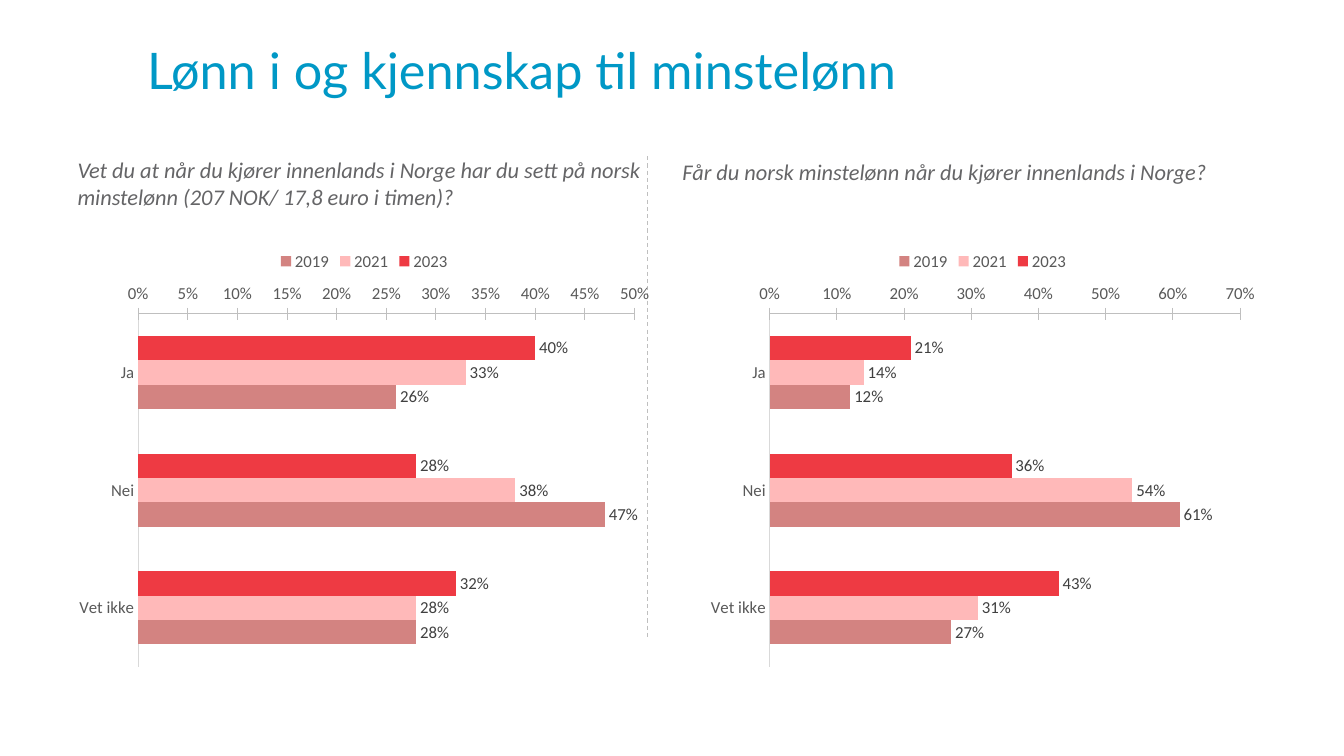
from lxml import etree
from pptx import Presentation
from pptx import util as u
from pptx.chart import data as chart_data
from pptx.dml import color
from pptx.enum import chart as charts, dml, shapes, text
from pptx.oxml import ns

ANSWERS = ["Ja", "Nei", "Vet ikke"]
YEAR_COLOURS = {"2023": "EE3A43", "2021": "FFB9B9", "2019": "D38381"}
AWARE_OF_MINIMUM = {
    "2023": [0.4, 0.28, 0.32],
    "2021": [0.33, 0.38, 0.28],
    "2019": [0.26, 0.47, 0.28],
}
RECEIVES_MINIMUM = {
    "2023": [0.21, 0.36, 0.43],
    "2021": [0.14, 0.54, 0.31],
    "2019": [0.12, 0.61, 0.27],
}


def rgb(value):
    return color.RGBColor.from_string(value)


def style_font(font, name, size, colour, italic=False):
    font.name = name
    font.size = u.Pt(size)
    font.bold = False
    font.italic = italic
    font.color.rgb = rgb(colour)


def write_text(box, bounds, wording, anchor, **style):
    box.left, box.top, box.width, box.height = map(u.Pt, bounds)
    frame = box.text_frame
    frame.word_wrap = True
    frame.auto_size = text.MSO_AUTO_SIZE.NONE
    frame.vertical_anchor = anchor
    para = frame.paragraphs[0]
    para.alignment = text.PP_ALIGN.LEFT
    para.space_before = u.Pt(0)
    span = para.add_run()
    span.text = wording
    style_font(span.font, **style)


def write_question(box, bounds, wording):
    write_text(box, bounds, wording, text.MSO_ANCHOR.BOTTOM,
               name="Calibri", size=16, colour="656567", italic=True)


def add_divider(page, x, top, bottom):
    line = page.shapes.add_connector(
        shapes.MSO_CONNECTOR.STRAIGHT, u.Pt(x), u.Pt(top), u.Pt(x), u.Pt(bottom))
    line.line.color.rgb = rgb("BFBFBF")
    line.line.width = u.Pt(0.75)
    line.line.dash_style = dml.MSO_LINE.DASH
    etree.SubElement(line._element.spPr, ns.qn("a:effectLst"))


def style_axis(axis, colour, tick):
    axis.has_major_gridlines = False
    axis.major_tick_mark = tick
    axis.minor_tick_mark = charts.XL_TICK_MARK.NONE
    axis.format.line.color.rgb = rgb(colour)
    axis.format.line.width = u.Pt(0.75)
    style_font(axis.tick_labels.font, "Calibri", 12, "595959")


def style_series(series):
    series.invert_if_negative = False
    series.format.fill.solid()
    series.format.fill.fore_color.rgb = rgb(YEAR_COLOURS[series.name])
    labels = series.data_labels
    labels.show_value = True
    labels.position = charts.XL_LABEL_POSITION.OUTSIDE_END
    labels.number_format = "0%"
    labels.number_format_is_linked = False
    style_font(labels.font, "Calibri", 12, "404040")


def add_answer_chart(page, bounds, shares, maximum, step):
    table = chart_data.CategoryChartData(number_format="0%")
    table.categories = ANSWERS
    for year, values in shares.items():
        table.add_series(year, values)
    chart = page.shapes.add_chart(
        charts.XL_CHART_TYPE.BAR_CLUSTERED, *map(u.Pt, bounds), table).chart
    style_font(chart.font, "Calibri", 10, "000000")
    chart.has_title = False
    chart.has_legend = True
    chart.legend.position = charts.XL_LEGEND_POSITION.TOP
    chart.legend.include_in_layout = False
    style_font(chart.legend.font, "Calibri", 12, "595959")

    style_axis(chart.category_axis, "D9D9D9", charts.XL_TICK_MARK.NONE)
    chart.category_axis.reverse_order = True
    scale = chart.value_axis
    style_axis(scale, "BFBFBF", charts.XL_TICK_MARK.CROSS)
    scale.minimum_scale = 0
    scale.maximum_scale = maximum
    scale.major_unit = step
    scale.tick_labels.number_format = "0%"
    scale.tick_labels.number_format_is_linked = False

    plot = chart.plots[0]
    plot.gap_width = 182
    plot.overlap = 0
    plot.vary_by_categories = False
    for series in plot.series:
        style_series(series)


def remove_empty_placeholders(page):
    for holder in list(page.placeholders):
        if not holder.text_frame.text:
            holder._element.getparent().remove(holder._element)


def main():
    deck = Presentation()
    deck.slide_width, deck.slide_height = u.Pt(960), u.Pt(540)
    page = deck.slides.add_slide(deck.slide_layouts.get_by_name("Comparison"))

    write_text(page.shapes.title, (97.9, 4.3, 813.6, 90),
               "Lønn i og kjennskap til minstelønn", text.MSO_ANCHOR.MIDDLE,
               name="Lato", size=36, colour="0098C6")
    write_question(page.placeholders[1], (48.2, 103, 424, 50.4),
                   "Vet du at når du kjører innenlands i Norge har du sett på "
                   "norsk minstelønn (207 NOK/ 17,8 euro i timen)?")
    write_question(page.placeholders[3], (480.2, 85, 424, 50.4),
                   "Får du norsk minstelønn når du kjører innenlands i Norge?")
    remove_empty_placeholders(page)

    add_divider(page, 462.2, 111.6, 455)
    add_answer_chart(page, (48.2, 171.4, 424, 311), AWARE_OF_MINIMUM, 0.5, 0.05)
    add_answer_chart(page, (499.7, 171.4, 404.6, 311), RECEIVES_MINIMUM, 0.7, 0.1)
    deck.save("out.pptx")


if __name__ == "__main__":
    main()
